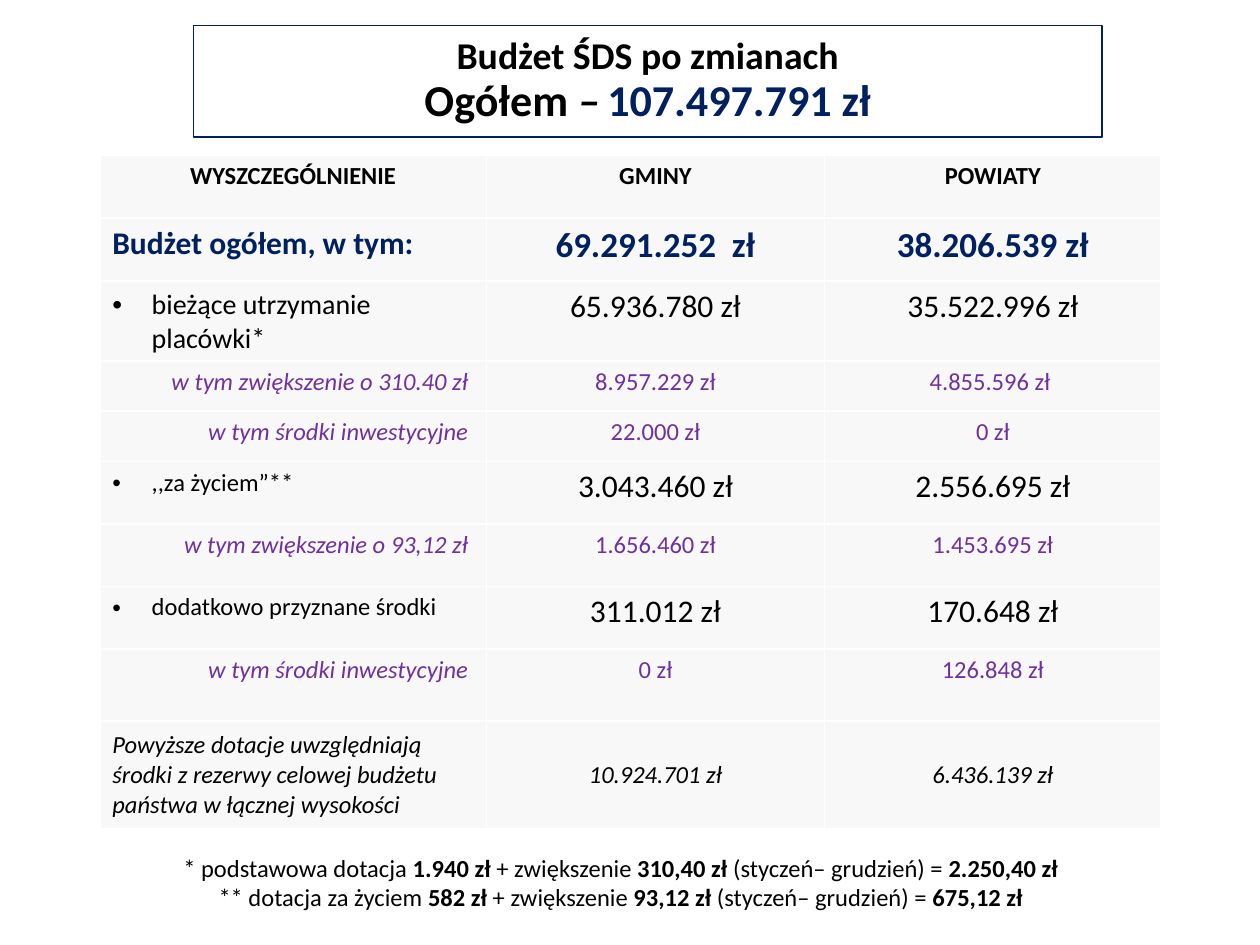
import pptx
import pptx.dml.color
import pptx.enum.shapes
import pptx.enum.text
import pptx.oxml
import pptx.oxml.ns
import pptx.util
from dataclasses import dataclass

Pt = pptx.util.Pt
ALIGN = pptx.enum.text.PP_ALIGN
ANCHOR = pptx.enum.text.MSO_ANCHOR


@dataclass(frozen=True)
class Theme:
    font: str = "Calibri"
    black: str = "000000"
    navy: str = "002060"
    purple: str = "7030A0"
    cell: str = "F2F2F2"
    cell_opacity: int = 52
    title: float = 21.6
    total: float = 25.2
    headline: int = 20
    amount: int = 18
    item: int = 16
    body: int = 14


def rgb(value):
    return pptx.dml.color.RGBColor.from_string(value)


class SlideBuilder:
    def __init__(self, slide, theme):
        self.slide, self.theme = slide, theme

    def run(self, paragraph, text, size=None, color=None, bold=False, italic=False):
        run = paragraph.add_run()
        run.text = text
        font = run.font
        font.name = self.theme.font
        font.size = Pt(size or self.theme.body)
        font.bold, font.italic = bold, italic
        font.color.rgb = rgb(color or self.theme.black)

    def title(self, box, lines):
        shape = self.slide.shapes.add_shape(
            pptx.enum.shapes.MSO_SHAPE.RECTANGLE, *map(Pt, box))
        shape.shadow.inherit = False
        shape.fill.background()
        shape.line.color.rgb = rgb(self.theme.navy)
        shape.line.width = Pt(0.75)
        shape.text_frame.word_wrap = True
        shape.text_frame.vertical_anchor = ANCHOR.MIDDLE
        paragraph = shape.text_frame.paragraphs[0]
        paragraph.alignment = ALIGN.CENTER
        paragraph.line_spacing = 0.9
        for index, line in enumerate(lines):
            if index:
                paragraph.add_line_break()
            for text, style in line:
                self.run(paragraph, text, bold=True, **style)

    def footnotes(self, box, notes):
        frame = self.slide.shapes.add_textbox(*map(Pt, box)).text_frame
        frame.word_wrap = True
        frame.auto_size = pptx.enum.text.MSO_AUTO_SIZE.SHAPE_TO_FIT_TEXT
        for index, note in enumerate(notes):
            paragraph = frame.add_paragraph() if index else frame.paragraphs[0]
            paragraph.alignment = ALIGN.CENTER
            # Plain and bold pieces alternate
            for position, text in enumerate(note):
                self.run(paragraph, text, bold=position % 2 == 1)

    def bullet(self, paragraph):
        properties = paragraph._p.get_or_add_pPr()
        properties.set("marL", str(Pt(22.5)))
        properties.set("indent", str(-Pt(22.5)))
        namespace = pptx.oxml.ns.nsdecls("a")
        for mark in ('buFont %s typeface="Arial"', 'buChar %s char="•"'):
            properties.append(pptx.oxml.parse_xml(f"<a:{mark % namespace}/>"))

    def cell(self, cell, text, align, style, bulleted=False, anchor=ANCHOR.TOP):
        cell.fill.solid()
        cell.fill.fore_color.rgb = rgb(self.theme.cell)
        fill_color = cell._tc.tcPr.find(".//" + pptx.oxml.ns.qn("a:srgbClr"))
        fill_color.append(pptx.oxml.parse_xml(
            f'<a:alpha {pptx.oxml.ns.nsdecls("a")} val="{self.theme.cell_opacity * 1000}"/>'))
        cell.vertical_anchor = anchor
        paragraph = cell.text_frame.paragraphs[0]
        paragraph.alignment = align
        if bulleted:
            self.bullet(paragraph)
        self.run(paragraph, text, **style)

    def table(self, box, widths, rows, kinds):
        table = self.slide.shapes.add_table(len(rows), len(widths), *map(Pt, box)).table
        table.horz_banding = False
        for column, width in zip(table.columns, widths):
            column.width = Pt(width)
        for index, (kind, height, label, *amounts) in enumerate(rows):
            table.rows[index].height = Pt(height)
            look = kinds[kind]
            anchor = look.get("anchor", ANCHOR.TOP)
            self.cell(table.cell(index, 0), label, look["align"], look["label"],
                      look.get("bulleted", False), anchor)
            for column, amount in enumerate(amounts, 1):
                self.cell(table.cell(index, column), amount, ALIGN.CENTER,
                          look["amount"], anchor=anchor)


def main():
    theme = Theme()
    deck = pptx.Presentation()
    deck.slide_width, deck.slide_height = Pt(720), Pt(540)
    builder = SlideBuilder(deck.slides.add_slide(deck.slide_layouts[6]), theme)

    # Title with the overall budget
    total = {"size": theme.total}
    builder.title((110.6, 14.8, 519.2, 63.6), [
        [("Budżet ŚDS po zmianach", {"size": theme.title})],
        [("Ogółem ", total), ("–", {**total, "italic": True}),
         (" ", {"size": theme.amount}),
         ("107.497.791 zł", {**total, "color": theme.navy})],
    ])

    # Footnotes
    builder.footnotes((45.4, 483.8, 618.5, 41.2), [
        ("* podstawowa dotacja ", "1.940 zł ", "+ zwiększenie ", "310,40 zł",
         " (styczeń– grudzień) = ", "2.250,40 zł"),
        ("** dotacja za życiem ", "582 zł", " + zwiększenie ", "93,12 zł",
         " (styczeń– grudzień) = ", "675,12 zł"),
    ])

    # Looks of the table rows
    header = {"bold": True}
    budget = {"bold": True, "color": theme.navy}
    detail = {"color": theme.purple}
    remark = {"italic": True}
    item = {"align": ALIGN.LEFT, "label": {}, "amount": {"size": theme.amount},
            "bulleted": True}
    kinds = {
        "header": {"align": ALIGN.CENTER, "label": header, "amount": header},
        "budget": {"align": ALIGN.LEFT, "label": {**budget, "size": theme.amount},
                   "amount": {**budget, "size": theme.headline}},
        "main item": {**item, "label": {"size": theme.item}},
        "item": item,
        "detail": {"align": ALIGN.RIGHT, "label": {**detail, "italic": True},
                   "amount": detail},
        "remark": {"align": ALIGN.LEFT, "label": remark, "amount": remark,
                   "anchor": ANCHOR.MIDDLE},
    }

    # Budget table: kind, height, label, communes, counties
    builder.table((57, 88.7, 606.6, 383.6), (221, 193.2, 192.4), [
        ("header", 36, "WYSZCZEGÓLNIENIE", "GMINY", "POWIATY"),
        ("budget", 36, "Budżet ogółem, w tym:", "69.291.252  zł", "38.206.539 zł"),
        ("main item", 36, "bieżące utrzymanie placówki*", "65.936.780 zł", "35.522.996 zł"),
        ("detail", 28.7, "w tym zwiększenie o 310.40 zł ", "8.957.229 zł", "4.855.596 zł "),
        ("detail", 28.7, "w tym środki inwestycyjne ", "22.000 zł", "0 zł"),
        ("item", 35.7, ",,za życiem”**", "3.043.460 zł", "2.556.695 zł"),
        ("detail", 35.7, "w tym zwiększenie o 93,12 zł ", "1.656.460 zł", "1.453.695 zł"),
        ("item", 35.7, "dodatkowo przyznane środki", "311.012 zł", "170.648 zł"),
        ("detail", 41.3, "w tym środki inwestycyjne ", "0 zł", "126.848 zł"),
        ("remark", 61.6, "Powyższe dotacje uwzględniają środki z rezerwy celowej "
         "budżetu państwa w łącznej wysokości", "10.924.701 zł", "6.436.139 zł"),
    ], kinds)

    deck.save("out.pptx")


if __name__ == "__main__":
    main()
